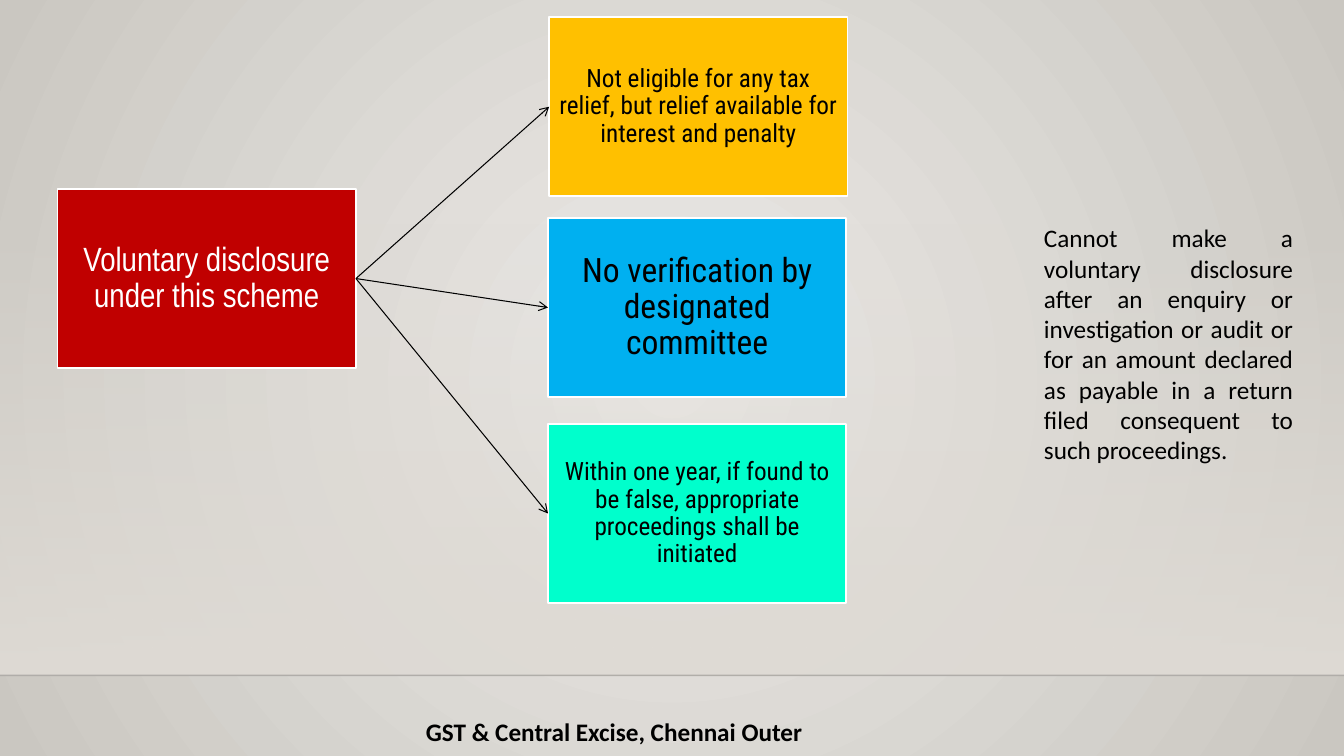
from pptx import Presentation
from pptx import util as u
from pptx.dml.color import RGBColor
from pptx.enum import shapes, text
from pptx.oxml import parse_xml
from pptx.oxml.ns import nsdecls, qn

COLORS = {
    "black": "000000", "white": "FFFFFF", "red": "C00000", "amber": "FFC000",
    "blue": "00B0F0", "mint": "00FFCC", "rule": "000001",
    "glow": "ECEAE7", "edge": "CAC7C1", "floor": "DFDBD5",
}
BOX_W, BOX_H = 7.52, 4.52


class Board:
    def __init__(self, slide):
        self.slide = slide

    def color(self, name):
        return RGBColor.from_string(COLORS[name])

    def gradient(self, owner, start, end, direction, start_alpha=100):
        solid = next(owner.iter(qn("a:solidFill")))
        solid.getparent().replace(solid, parse_xml(
            f'<a:gradFill {nsdecls("a")} rotWithShape="1"><a:gsLst>'
            f'<a:gs pos="0"><a:srgbClr val="{COLORS[start]}">'
            f'<a:alpha val="{start_alpha * 1000}"/></a:srgbClr></a:gs>'
            f'<a:gs pos="100000"><a:srgbClr val="{COLORS[end]}"/></a:gs>'
            f'</a:gsLst>{direction}</a:gradFill>'))

    def background(self):
        fill = self.slide.background.fill
        fill.solid()
        fill.fore_color.rgb = self.color("glow")
        self.gradient(self.slide.element, "glow", "edge",
                      '<a:path path="circle"><a:fillToRect l="50000" t="50000" '
                      'r="50000" b="50000"/></a:path>')

    def rectangle(self, x, y, w, h, fill):
        rect = self.slide.shapes.add_shape(
            shapes.MSO_SHAPE.RECTANGLE, u.Cm(x), u.Cm(y), u.Cm(w), u.Cm(h))
        rect.shadow.inherit = False
        rect.fill.solid()
        rect.fill.fore_color.rgb = self.color(fill)
        rect.line.fill.background()
        return rect

    def backdrop(self, y, h):
        wall = self.rectangle(0, y, 33.87, h, "floor")
        self.gradient(wall.element.spPr, "floor", "floor",
                      '<a:lin ang="5400000" scaled="0"/>', 0)

    def set_words(self, frame, words, size, font, color, align, bold=False):
        frame.word_wrap = True
        paragraph = frame.paragraphs[0]
        paragraph.text = words
        paragraph.alignment = align
        paragraph.font.size = u.Pt(size)
        paragraph.font.name = font
        paragraph.font.bold = bold
        paragraph.font.color.rgb = self.color(color)
        return paragraph

    def box(self, x, y, words, fill, size, font, color="black"):
        box = self.rectangle(x, y, BOX_W, BOX_H, fill)
        box.line.color.rgb = self.color("white")
        box.line.width = u.Pt(1.25)
        frame = box.text_frame
        frame.vertical_anchor = text.MSO_ANCHOR.MIDDLE
        inset = u.Cm(size * 0.01)
        frame.margin_left = frame.margin_right = inset
        frame.margin_top = frame.margin_bottom = inset
        paragraph = self.set_words(frame, words, size, font, color,
                                   text.PP_ALIGN.CENTER)
        paragraph.line_spacing = 0.9
        return box

    def label(self, x, y, w, h, words, align, anchor, bold=False):
        frame = self.slide.shapes.add_textbox(
            u.Cm(x), u.Cm(y), u.Cm(w), u.Cm(h)).text_frame
        frame.vertical_anchor = anchor
        self.set_words(frame, words, 18, "Calibri", "black", align, bold)

    def line(self, x1, y1, x2, y2, color, width):
        line = self.slide.shapes.add_connector(
            shapes.MSO_CONNECTOR.STRAIGHT, u.Cm(x1), u.Cm(y1), u.Cm(x2), u.Cm(y2))
        line.line.color.rgb = self.color(color)
        line.line.width = u.Pt(width)
        line.element.spPr.append(parse_xml(f'<a:effectLst {nsdecls("a")}/>'))
        return line

    def rule(self, y):
        rule = self.line(0, y, 33.87, y, "rule", 1)
        tint = next(rule.element.spPr.iter(qn("a:srgbClr")))
        tint.append(parse_xml(f'<a:alpha {nsdecls("a")} val="20000"/>'))

    def arrow(self, source, target):
        arrow = self.line(0, 0, 1, 1, "black", 0.75)
        arrow.begin_connect(source, 3)
        arrow.end_connect(target, 1)
        arrow.element.spPr.find(qn("a:ln")).append(
            parse_xml(f'<a:tailEnd {nsdecls("a")} type="arrow"/>'))


def main():
    deck = Presentation()
    deck.slide_width, deck.slide_height = u.Cm(33.87), u.Cm(19.05)
    board = Board(deck.slides.add_slide(deck.slide_layouts[6]))
    board.background()
    board.backdrop(5.61, 11.41)
    board.rule(17.02)
    board.label(7.77, 17.15, 15.42, 1.8, "GST & Central Excise, Chennai Outer",
                text.PP_ALIGN.CENTER, text.MSO_ANCHOR.BOTTOM, bold=True)

    scheme = board.box(1.45, 4.76, "Voluntary disclosure under this scheme",
                       "red", 24, "Arial Narrow", "white")
    conditions = [
        (13.84, 0.43, "Not eligible for any tax relief, but relief available "
         "for interest and penalty", "amber", 18),
        (13.81, 5.49, "No verification by designated committee", "blue", 24),
        (13.81, 10.68, "Within one year, if found to be false, appropriate "
         "proceedings shall be initiated", "mint", 18),
    ]
    condition_boxes = [board.box(*condition, "Roboto Condensed")
                       for condition in conditions]
    for condition_box in condition_boxes:
        board.arrow(scheme, condition_box)

    board.label(26.06, 5.49, 6.78, 6.4,
                "Cannot make a voluntary disclosure after an enquiry or "
                "investigation or audit or for an amount declared as payable in "
                "a return filed consequent to such proceedings.",
                text.PP_ALIGN.JUSTIFY, text.MSO_ANCHOR.TOP)
    deck.save("out.pptx")


if __name__ == "__main__":
    main()
